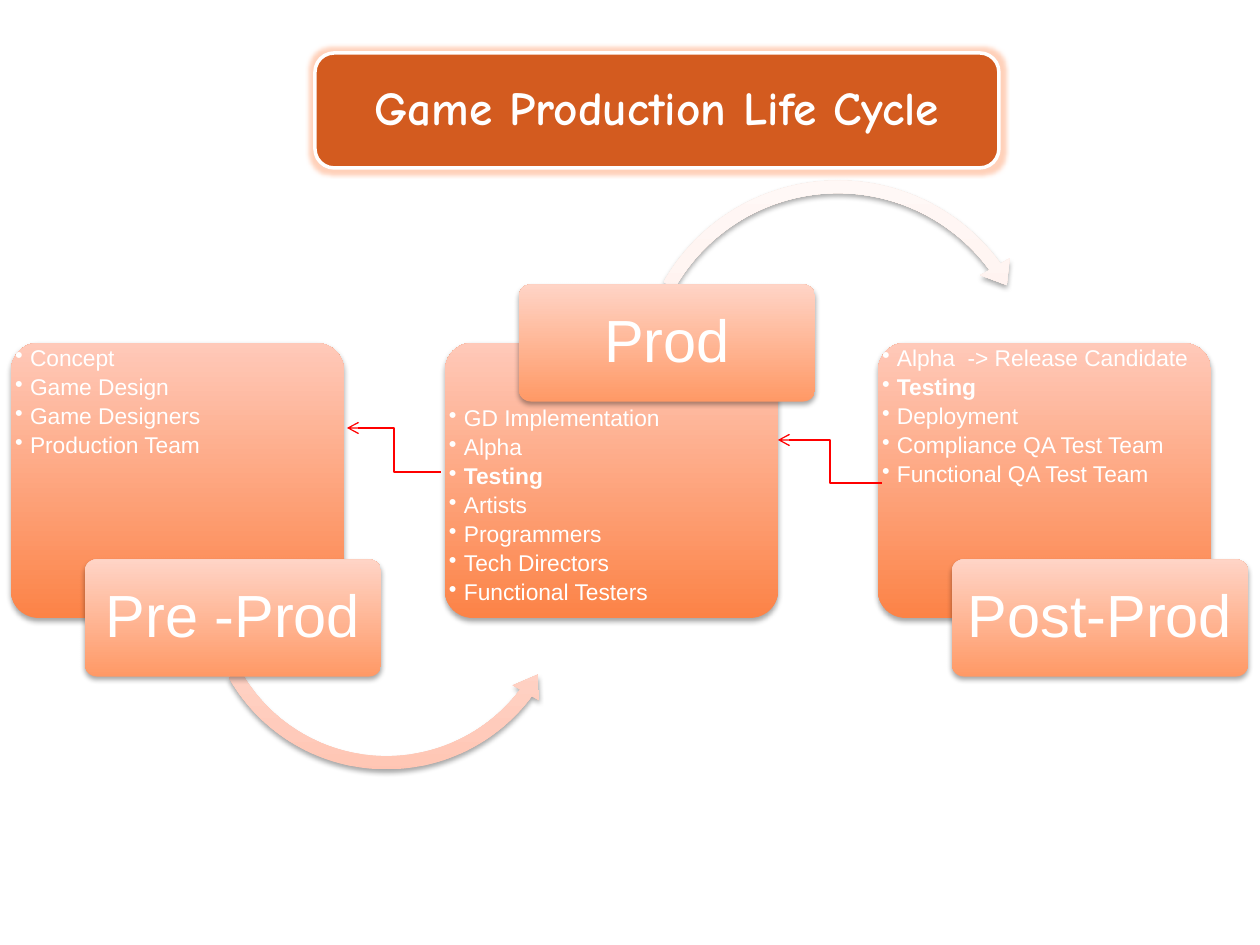
from lxml.etree import SubElement
from pptx import Presentation
from pptx.dml.color import RGBColor
from pptx.enum.shapes import MSO_CONNECTOR, MSO_SHAPE
from pptx.enum.text import MSO_ANCHOR, MSO_AUTO_SIZE, PP_ALIGN
from pptx.oxml.ns import qn
from pptx.util import Pt

PX = 914400 // 126

TITLE = "Game Production Life Cycle"
STAGES = [
    {"name": "Pre -Prod", "label_on_top": False,
     "items": ["Concept", "Game Design", "Game Designers", "Production Team"],
     "arrow": (MSO_SHAPE.LEFT_CIRCULAR_ARROW, (197, 399, 379, 379),
               (0.035, 4.32, 22.07, 90.24, 0.04),
               [(0, "FFC5B3"), (35, "FFD5C9"), (100, "FFEFEA")])},
    {"name": "Prod", "label_on_top": True,
     "items": ["GD Implementation", "Alpha", "Testing", "Artists", "Programmers",
               "Tech Directors", "Functional Testers"],
     "arrow": (MSO_SHAPE.CIRCULAR_ARROW, (627, 170, 422, 422),
               (0.03, 3.85, 194.39, 125.75, 0.04),
               [(0, "FFE6DF"), (35, "FFEDE7"), (100, "FFF8F6")])},
    {"name": "Post-Prod", "label_on_top": False,
     "items": ["Alpha  -> Release Candidate", "Testing", "Deployment",
               "Compliance QA Test Team", "Functional QA Test Team"],
     "arrow": None},
]
BOLD_ITEM = "Testing"
FEEDBACK_LINES = [(441, 472, 347, 428), (882, 483, 778, 440)]

CARD_STOPS = [(0, "FC8347"), (100, "FFC9B9")]
LABEL_STOPS = [(0, "FF9966"), (100, "FFD4C6")]
CARD_LEFT, CARD_TOP, CARD_W, CARD_H = 11, 343, 333, 275
STAGE_PITCH = 433.5
LABEL_W, LABEL_H, LABEL_SHIFT = 296, 117, 74
LIST_H = 215


def emu(*lengths):
    return [round(length * PX) for length in lengths]


def rgb(hex_colour):
    return RGBColor.from_string(hex_colour)


def add_effect(shape, tag, colour, opacity, **settings):
    shape.shadow.inherit = False
    effects = shape._element.spPr.find(qn("a:effectLst"))
    effect = SubElement(effects, qn(tag), {k: str(v) for k, v in settings.items()})
    shade = SubElement(effect, qn("a:srgbClr"), val=colour)
    SubElement(shade, qn("a:alpha"), val=str(opacity * 1000))


def add_gradient_shape(slide, kind, box, adjustments, stops):
    """Add a borderless shape, shaded from bottom to top, with a soft shadow."""
    shape = slide.shapes.add_shape(kind, *emu(*box))
    for i, value in enumerate(adjustments):
        shape.adjustments[i] = value
    shape.fill.gradient()
    shape.fill.gradient_angle = 90
    stop_list = shape._element.spPr.find(".//" + qn("a:gsLst"))
    stop_list.clear()
    for position, colour in stops:
        stop = SubElement(stop_list, qn("a:gs"), pos=str(position * 1000))
        SubElement(stop, qn("a:srgbClr"), val=colour)
    shape.line.fill.background()
    add_effect(shape, "a:outerShdw", "000000", 35, blurRad=Pt(3), dist=Pt(1.8),
               dir=5400000, rotWithShape=0)
    return shape


def set_frame(frame, anchor, side, top):
    frame.word_wrap = True
    frame.auto_size = MSO_AUTO_SIZE.NONE
    frame.vertical_anchor = anchor
    frame.margin_left, frame.margin_right, frame.margin_top, frame.margin_bottom = emu(
        side, side, top, top)


def style(paragraph, size, font="Arial", bold=False):
    paragraph.line_spacing = 0.9
    paragraph.font.name = font
    paragraph.font.size = Pt(size)
    paragraph.font.bold = bold
    paragraph.font.color.rgb = rgb("FFFFFF")


def set_heading(shape, text, side, top, size, font="Arial", bold=False):
    set_frame(shape.text_frame, MSO_ANCHOR.MIDDLE, side, top)
    paragraph = shape.text_frame.paragraphs[0]
    paragraph.text = text
    paragraph.alignment = PP_ALIGN.CENTER
    style(paragraph, size, font, bold)


def add_list(slide, box, items):
    frame = slide.shapes.add_textbox(*emu(*box)).text_frame
    set_frame(frame, MSO_ANCHOR.TOP, 4, 4)
    for i, item in enumerate(items):
        paragraph = frame.add_paragraph() if i else frame.paragraphs[0]
        paragraph.text = item
        properties = paragraph._p.get_or_add_pPr()
        indent = emu(15)[0]
        properties.set("marL", str(indent))
        properties.set("indent", str(-indent))
        SubElement(properties, qn("a:buChar"), char="•")
        paragraph.space_after = Pt(2.5)
        style(paragraph, 13, bold=item == BOLD_ITEM)


def add_stage(slide, index, stage):
    left = CARD_LEFT + round(index * STAGE_PITCH)
    on_top = stage["label_on_top"]
    label_middle = CARD_TOP if on_top else CARD_TOP + CARD_H
    list_top = CARD_TOP + CARD_H - LIST_H if on_top else CARD_TOP
    rounded = MSO_SHAPE.ROUNDED_RECTANGLE
    add_gradient_shape(slide, rounded, (left, CARD_TOP, CARD_W, CARD_H), [0.1], CARD_STOPS)
    add_list(slide, (left, list_top, CARD_W, LIST_H), stage["items"])
    if stage["arrow"]:
        add_gradient_shape(slide, *stage["arrow"])
    label_box = (left + LABEL_SHIFT, label_middle - LABEL_H / 2, LABEL_W, LABEL_H)
    label = add_gradient_shape(slide, rounded, label_box, [0.1], LABEL_STOPS)
    set_heading(label, stage["name"], 5, 6, 34)


def add_feedback_line(slide, ends):
    line = slide.shapes.add_connector(MSO_CONNECTOR.ELBOW, *emu(*ends))
    line.line.color.rgb = rgb("FF0000")
    line.line.width = Pt(0.75)
    SubElement(line.line._get_or_add_ln(), qn("a:tailEnd"), type="arrow")
    SubElement(line._element.spPr, qn("a:effectLst"))


def add_title(slide):
    banner = slide.shapes.add_shape(MSO_SHAPE.ROUNDED_RECTANGLE, *emu(315, 53, 684, 115))
    banner.fill.solid()
    banner.fill.fore_color.rgb = rgb("D35B1F")
    banner.line.color.rgb = rgb("FFFFFF")
    banner.line.width = Pt(2)
    add_effect(banner, "a:glow", "FF9966", 45, rad=Pt(5))
    title = slide.shapes.title
    title.left, title.top, title.width, title.height = emu(320, 58, 673, 105)
    set_heading(title, TITLE, 13, 8, 27, "Comic Neue", True)
    banner._element.addnext(title._element)


def main():
    deck = Presentation()
    deck.slide_width, deck.slide_height = emu(1260, 945)
    slide = deck.slides.add_slide(deck.slide_layouts[5])
    for index, stage in enumerate(STAGES):
        add_stage(slide, index, stage)
    for ends in FEEDBACK_LINES:
        add_feedback_line(slide, ends)
    add_title(slide)
    deck.save("out.pptx")


if __name__ == "__main__":
    main()
